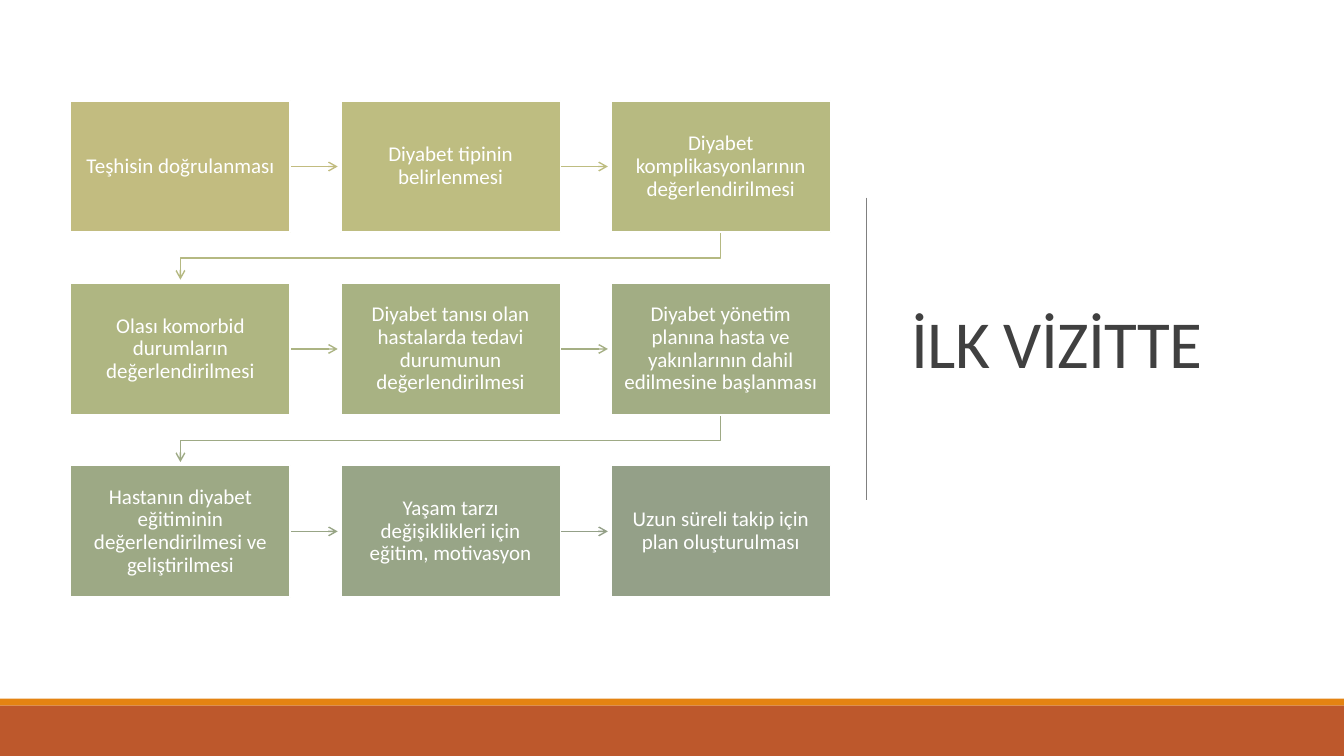
from dataclasses import dataclass

from lxml import etree
from pptx import Presentation
from pptx import util as u
from pptx.dml.color import RGBColor
from pptx.enum import shapes, text
from pptx.oxml import ns


@dataclass(frozen=True)
class Theme:
    font: str = "Calibri"
    title_size: float = 48
    step_size: float = 15
    white: str = "FFFFFF"
    title: str = "404040"
    divider: str = "808080"
    accent: str = "E48312"
    footer: str = "BD582C"


@dataclass(frozen=True)
class Area:
    """A rectangle in columns and rows, each one hundredth of the slide."""
    left: float
    top: float
    width: float
    height: float

    @property
    def center(self) -> float:
        return self.left + self.width / 2

    @property
    def middle(self) -> float:
        return self.top + self.height / 2

    @property
    def right(self) -> float:
        return self.left + self.width

    @property
    def bottom(self) -> float:
        return self.top + self.height

    def box(self) -> tuple[int, int, int, int]:
        return x(self.left), y(self.top), x(self.width), y(self.height)


@dataclass(frozen=True)
class Step:
    label: str
    fill: str
    arrow: str = ""


THEME = Theme()
WIDTH, HEIGHT = u.Inches(13.33), u.Inches(7.5)
PER_ROW = 3
FIRST_BOX = Area(5.25, 13.33, 16.35, 17.4)
COLUMN_PITCH, ROW_PITCH = 20.1, 24.13
ARROW_LENGTH = 3.53
TURN_DEPTH, RETURN_DEPTH = 3.4, 6.27

STEPS = [
    Step("Teşhisin doğrulanması", "C2BC80", "C2BC80"),
    Step("Diyabet tipinin belirlenmesi", "BEBD81", "BEBD81"),
    Step("Diyabet komplikasyonlarının değerlendirilmesi", "B7BA81", "B5B982"),
    Step("Olası komorbid durumların değerlendirilmesi", "AFB682", "ACB483"),
    Step("Diyabet tanısı olan hastalarda tedavi durumunun değerlendirilmesi", "A8B283", "A5AF84"),
    Step("Diyabet yönetim planına hasta ve yakınlarının dahil edilmesine başlanması",
         "A2AD84", "9EAA85"),
    Step("Hastanın diyabet eğitiminin değerlendirilmesi ve geliştirilmesi", "9DA985", "98A586"),
    Step("Yaşam tarzı değişiklikleri için eğitim, motivasyon", "98A587", "94A088"),
    Step("Uzun süreli takip için plan oluşturulması", "94A088"),
]


def x(columns: float) -> int:
    return round(WIDTH * columns / 100)


def y(rows: float) -> int:
    return round(HEIGHT * rows / 100)


def rgb(color: str) -> RGBColor:
    return RGBColor.from_string(color)


def write(shape, words: str, *, size: float, color: str, align, line_spacing: float,
          space_after: float = 0, inset: float = 0.1, tracking: float = 0) -> None:
    frame = shape.text_frame
    frame.word_wrap = True
    frame.auto_size = text.MSO_AUTO_SIZE.NONE
    frame.vertical_anchor = text.MSO_ANCHOR.MIDDLE
    frame.margin_left = frame.margin_right = u.Inches(inset)
    frame.margin_top = frame.margin_bottom = u.Inches(inset)
    paragraph = frame.paragraphs[0]
    paragraph.alignment = align
    paragraph.line_spacing = line_spacing
    paragraph.space_after = u.Pt(space_after)
    run = paragraph.add_run()
    run.text = words
    run.font.name = THEME.font
    run.font.size = u.Pt(size)
    run.font.color.rgb = rgb(color)
    if tracking:
        run.font._element.set("spc", str(round(tracking * 100)))


def add_rectangle(slide, area: Area, fill: str, outline: float = 0):
    shape = slide.shapes.add_shape(shapes.MSO_SHAPE.RECTANGLE, *area.box())
    shape.shadow.inherit = False
    shape.fill.solid()
    shape.fill.fore_color.rgb = rgb(fill)
    if outline:
        shape.line.color.rgb = rgb(THEME.white)
        shape.line.width = u.Pt(outline)
    else:
        shape.line.fill.background()
    return shape


def style_line(line, color: str, width: float, arrow: bool = False) -> None:
    line.color.rgb = rgb(color)
    line.width = u.Pt(width)
    if arrow:
        etree.SubElement(line._get_or_add_ln(), ns.qn("a:tailEnd"), type="arrow")


def add_straight(slide, start: tuple[float, float], end: tuple[float, float],
                 color: str, width: float, arrow: bool = False) -> None:
    connector = slide.shapes.add_connector(
        shapes.MSO_CONNECTOR.STRAIGHT, x(start[0]), y(start[1]), x(end[0]), y(end[1]))
    style_line(connector.line, color, width, arrow)
    etree.SubElement(connector._element.spPr, ns.qn("a:effectLst"))


def add_return_arrow(slide, source: Area, target: Area, color: str) -> None:
    """Lead from the end of one row to the start of the next."""
    turn = source.bottom + TURN_DEPTH
    builder = slide.shapes.build_freeform(x(source.center), y(source.bottom))
    corners = [(source.center, turn), (target.center, turn),
               (target.center, source.bottom + RETURN_DEPTH)]
    builder.add_line_segments([(x(column), y(row)) for column, row in corners], close=False)
    shape = builder.convert_to_shape()
    shape.shadow.inherit = False
    shape.fill.background()
    style_line(shape.line, color, 1, arrow=True)


def step_area(index: int) -> Area:
    row, column = divmod(index, PER_ROW)
    return Area(FIRST_BOX.left + column * COLUMN_PITCH, FIRST_BOX.top + row * ROW_PITCH,
                FIRST_BOX.width, FIRST_BOX.height)


def add_steps(slide) -> None:
    for index, step in enumerate(STEPS):
        area = step_area(index)
        if step.arrow and (index + 1) % PER_ROW:
            add_straight(slide, (area.right, area.middle),
                         (area.right + ARROW_LENGTH, area.middle), step.arrow, 1, arrow=True)
        elif step.arrow:
            add_return_arrow(slide, area, step_area(index + 1), step.arrow)
        box = add_rectangle(slide, area, step.fill, outline=1.25)
        write(box, step.label, size=THEME.step_size, color=THEME.white,
              align=text.PP_ALIGN.CENTER, line_spacing=0.9, space_after=5.25, inset=0.11)


def main() -> None:
    presentation = Presentation()
    presentation.slide_width, presentation.slide_height = WIDTH, HEIGHT
    slide = presentation.slides.add_slide(presentation.slide_layouts.get_by_name("Title Only"))

    title = slide.shapes.title
    title.left, title.top, title.width, title.height = Area(67.06, 9.2, 27.68, 73.73).box()
    write(title, "İLK VİZİTTE", size=THEME.title_size, color=THEME.title,
          align=text.PP_ALIGN.LEFT, line_spacing=0.85, tracking=-0.5)
    backdrop = add_rectangle(slide, Area(0, 0, 100, 92.4), THEME.white)
    title.element.addprevious(backdrop.element)

    add_straight(slide, (64.43, 26.13), (64.43, 66.13), THEME.divider, 0.5)
    add_rectangle(slide, Area(0, 92.4, 100, 0.93), THEME.accent)
    add_rectangle(slide, Area(0, 93.33, 100, 6.67), THEME.footer)
    add_steps(slide)
    presentation.save("out.pptx")


if __name__ == "__main__":
    main()
